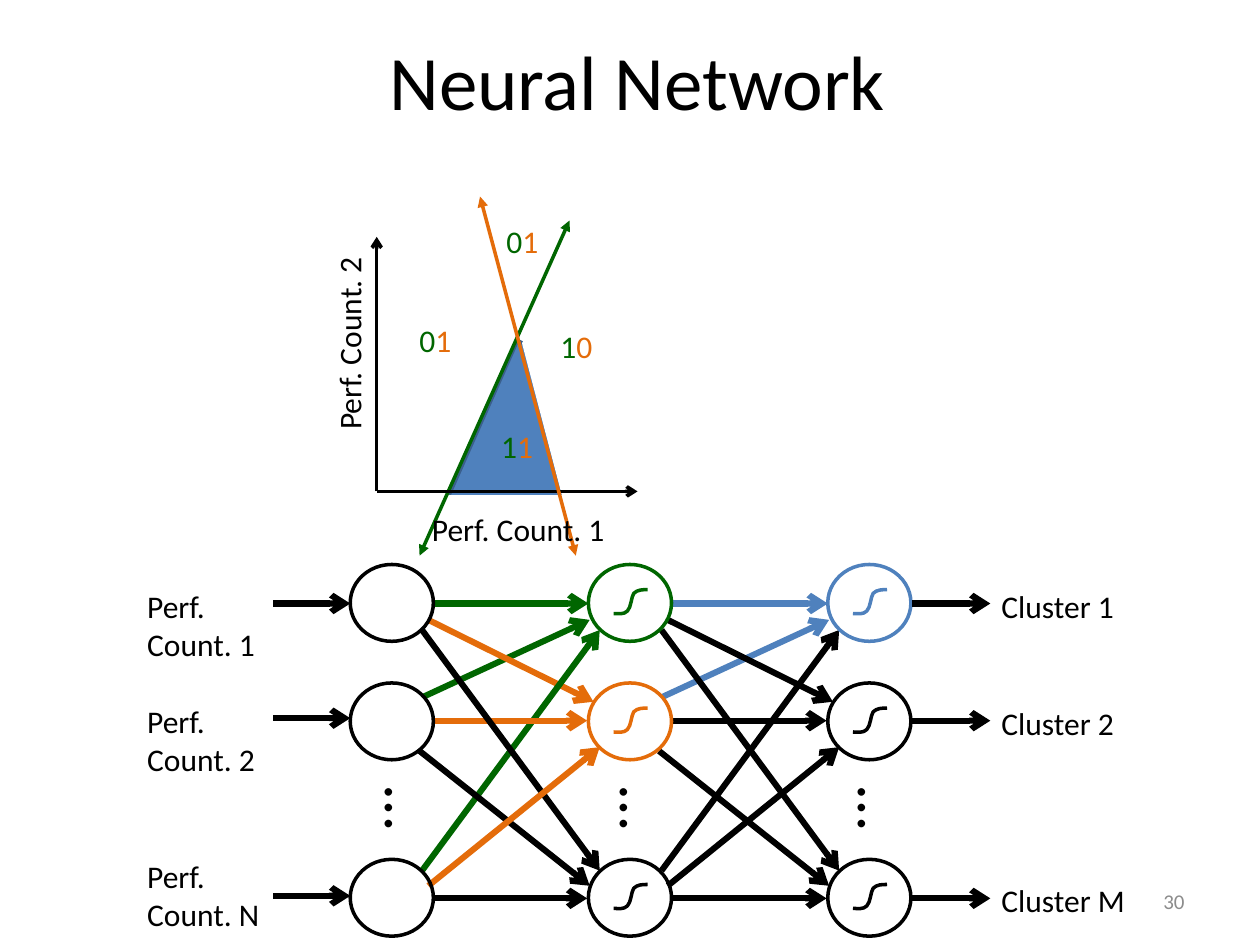
from lxml.etree import SubElement
from pptx import Presentation
from pptx.dml.color import RGBColor
from pptx.enum.shapes import MSO_CONNECTOR, MSO_SHAPE
from pptx.enum.text import MSO_ANCHOR, MSO_AUTO_SIZE, PP_ALIGN
from pptx.oxml.ns import qn
from pptx.util import Inches, Pt

THEME = {
    "font": "Calibri",
    "black": "000000", "white": "FFFFFF", "green": "006600", "orange": "E46C0A",
    "blue": "4F81BD", "navy": "3A5F8C", "gray": "8C8C8C",
    "title": 44, "dots": 36, "label": 18, "number": 12,
    "thick": 3.5, "thin": 2,
}

TITLE = "Neural Network"
PAGE_NUMBER = "30"

REGION_BLOCKS = [
    (3.79, 2.83, 0.91, 1.37, 23.9, "blue", "navy"),
    (4.34, 2.61, 0.67, 1.53, 345.3, "white", "white"),
    (3.83, 3.51, 0.67, 1.53, 270, "white", "white"),
]
PLOT_LINES = [
    ((4.52, 1.75), (3.33, 4.41), "green", "triangle", "triangle"),
    ((2.99, 3.9), (2.99, 1.88), "black", None, "arrow"),
    ((2.99, 3.9), (5.06, 3.9), "black", None, "arrow"),
    ((3.81, 1.56), (4.57, 4.41), "orange", "triangle", "triangle"),
]
AXIS_LABELS = [("Perf. Count. 2", 1.97, 2.51, 270), ("Perf. Count. 1", 3.33, 4, 0)]
REGION_CODES = [("01", 3.23, 2.5), ("11", 3.88, 3.34), ("01", 3.92, 1.71), ("10", 4.35, 2.55)]

ROW_TOPS = [4.48, 5.42, 6.82]
NODE_WIDTH, NODE_HEIGHT = 0.66, 0.61
LAYERS = [
    (2.78, ["black", "black", "black"], False),
    (4.67, ["green", "orange", "black"], True),
    (6.57, ["blue", "black", "black"], True),
]
LINK_ORIGINS = [2.78, 4.68]
LINKS = [
    ((0.66, 4.79), (1.89, 4.79), ("green", "blue")),
    ((0.58, 5.53), (1.9, 4.92), ("green", "blue")),
    ((0.62, 4.92), (1.93, 5.57), ("orange", "black")),
    ((0.57, 6.91), (1.98, 5), ("green", "black")),
    ((0.66, 5.72), (1.88, 5.72), ("orange", "black")),
    ((0.66, 7.13), (1.88, 7.13), ("black", "black")),
    ((0.57, 5), (1.98, 6.91), ("black", "black")),
    ((0.55, 5.96), (1.9, 7.03), ("black", "black")),
    ((0.62, 7.03), (1.98, 5.93), ("orange", "black")),
]
DOTS_LEFTS = [2.99, 4.86, 6.75]
INPUTS = [("Perf. Count. 1", 4.61, 4.79), ("Perf. Count. 2", 5.52, 5.7), ("Perf. Count. N", 6.75, 7.11)]
OUTPUTS = [("Cluster 1", 4.61, 4.79), ("Cluster 2", 5.54, 5.72), ("Cluster M", 6.94, 7.13)]
SIGMOID = [
    (0, 0.19), (0.04, 0.19), (0.08, 0.2), (0.11, 0.17), (0.14, 0.14),
    (0.14, 0.06), (0.16, 0.03), (0.19, 0), (0.23, 0), (0.27, 0),
]


def color(name):
    return RGBColor.from_string(THEME[name])


def set_outline(shape, name, weight):
    shape.line.color.rgb = color(name)
    shape.line.width = Pt(weight)


def add_shape(page, kind, left, top, width, height, line, fill=None):
    shape = page.shapes.add_shape(kind, Inches(left), Inches(top), Inches(width), Inches(height))
    shape.shadow.inherit = False
    if fill:
        shape.fill.solid()
        shape.fill.fore_color.rgb = color(fill)
    else:
        shape.fill.background()
    set_outline(shape, line, THEME["thin"])
    return shape


def add_line(page, start, end, name, weight, head=None, tail="arrow"):
    line = page.shapes.add_connector(MSO_CONNECTOR.STRAIGHT, *map(Inches, start + end))
    set_outline(line, name, weight)
    outline = line.line._get_or_add_ln()
    for tag, kind in (("a:headEnd", head), ("a:tailEnd", tail)):
        if kind:
            SubElement(outline, qn(tag), type=kind)
    SubElement(line.element.spPr, qn("a:effectLst"))


def style(paragraph, size, name):
    paragraph.font.name = THEME["font"]
    paragraph.font.size = Pt(THEME[size])
    paragraph.font.color.rgb = color(name)


def add_text(page, text, left, top, width, height, size="label", name="black", rotation=0):
    box = page.shapes.add_textbox(Inches(left), Inches(top), Inches(width), Inches(height))
    box.rotation = rotation
    frame = box.text_frame
    frame.word_wrap = True
    frame.auto_size = MSO_AUTO_SIZE.SHAPE_TO_FIT_TEXT
    paragraph = frame.paragraphs[0]
    paragraph.text = text
    style(paragraph, size, name)
    return box


def add_code(page, code, left, top):
    paragraph = add_text(page, "", left, top, 0.8, 0.4).text_frame.paragraphs[0]
    for digit, name in zip(code, ("green", "orange")):
        span = paragraph.add_run()
        span.text = digit
        span.font.color.rgb = color(name)


def add_sigmoid(page, left, top, name):
    points = [(Inches(left + x), Inches(top + y)) for x, y in SIGMOID]
    builder = page.shapes.build_freeform(*points[0])
    builder.add_line_segments(points[1:], close=False)
    curve = builder.convert_to_shape()
    curve.shadow.inherit = False
    curve.fill.background()
    set_outline(curve, name, THEME["thin"])
    segments = curve.element.xpath(".//a:lnTo")
    outline = segments[0].getparent()
    for first in range(0, len(segments), 3):
        bezier = SubElement(outline, qn("a:cubicBezTo"))
        for segment in segments[first:first + 3]:
            bezier.append(segment[0])
            outline.remove(segment)


def add_heading(page):
    title = page.shapes.title
    title.left, title.top, title.width, title.height = map(Inches, (0.56, 0.01, 9, 1.25))
    title.text_frame.text = TITLE
    title.text_frame.vertical_anchor = MSO_ANCHOR.MIDDLE
    paragraph = title.text_frame.paragraphs[0]
    paragraph.alignment = PP_ALIGN.CENTER
    style(paragraph, "title", "black")
    number = add_text(page, PAGE_NUMBER, 7.17, 6.95, 2.33, 0.4, "number", "gray").text_frame
    number.auto_size = MSO_AUTO_SIZE.NONE
    number.vertical_anchor = MSO_ANCHOR.MIDDLE
    number.paragraphs[0].alignment = PP_ALIGN.RIGHT


def add_network(page):
    for start, end, names in LINKS:
        for origin, name in zip(LINK_ORIGINS, names):
            add_line(page, (origin + start[0], start[1]), (origin + end[0], end[1]), name, THEME["thick"])
    for left, names, active in LAYERS:
        for top, name in zip(ROW_TOPS, names):
            add_shape(page, MSO_SHAPE.OVAL, left, top, NODE_WIDTH, NODE_HEIGHT, name)
            if active:
                add_sigmoid(page, left + 0.2, top + 0.2, name)
    for left in DOTS_LEFTS:
        add_text(page, "…", left, 6.09, 0.56, 0.67, "dots", rotation=90)
    for text, top, middle in INPUTS:
        add_line(page, (2.17, middle), (2.78, middle), "black", THEME["thick"])
        add_text(page, text, 1.07, top, 1.3, 0.71)
    for text, top, middle in OUTPUTS:
        add_line(page, (7.24, middle), (7.86, middle), "black", THEME["thick"])
        add_text(page, text, 7.85, top, 1.3, 0.4)


def add_plot(page):
    for start, end, name, head, tail in PLOT_LINES:
        add_line(page, start, end, name, THEME["thin"], head, tail)
    for text, left, top, rotation in AXIS_LABELS:
        add_text(page, text, left, top, 1.6, 0.4, rotation=rotation)
    for code, left, top in REGION_CODES:
        add_code(page, code, left, top)


def main():
    deck = Presentation()
    deck.slide_width, deck.slide_height = Inches(10), Inches(7.5)
    page = deck.slides.add_slide(deck.slide_layouts[5])
    for left, top, width, height, rotation, fill, line in REGION_BLOCKS:
        block = add_shape(page, MSO_SHAPE.RECTANGLE, left, top, width, height, line, fill)
        block.rotation = rotation
    add_heading(page)
    add_network(page)
    add_plot(page)
    deck.save("out.pptx")


if __name__ == "__main__":
    main()
